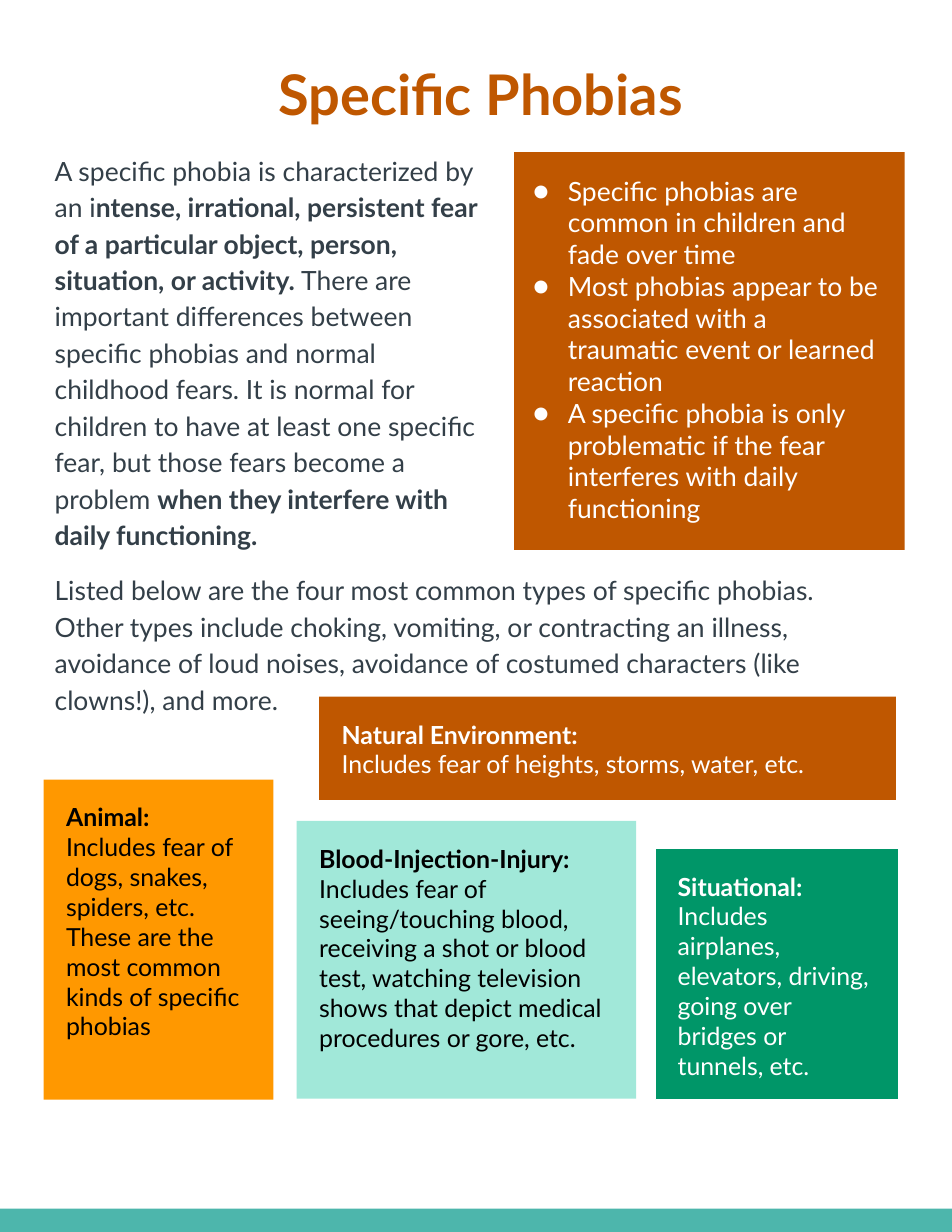
"""Build a one-page handout on specific phobias."""
from dataclasses import dataclass

from lxml import etree
from pptx import Presentation
from pptx.dml.color import RGBColor
from pptx.enum.shapes import MSO_SHAPE
from pptx.enum.text import MSO_ANCHOR, MSO_AUTO_SIZE, PP_ALIGN
from pptx.oxml.ns import qn
from pptx.util import Cm, Pt

RECTANGLE = MSO_SHAPE.RECTANGLE
TOP, MIDDLE = MSO_ANCHOR.TOP, MSO_ANCHOR.MIDDLE
LEFT, CENTER = PP_ALIGN.LEFT, PP_ALIGN.CENTER
NO_FIT = MSO_AUTO_SIZE.NONE

FONT = "Lato"
ORANGE, AMBER, MINT, GREEN, TEAL = "BF5700", "FF9800", "A1E8D9", "009668", "4DB6AC"
SLATE, BLACK, WHITE = "333F48", "000000", "FFFFFF"
PAGE_WIDTH, PAGE_HEIGHT, BAR_HEIGHT = 21.59, 27.94, 0.53
MARGIN = 0.99
NARROW, WIDE = 0.25, 0.51


@dataclass(frozen=True)
class Area:
    left: float
    top: float
    width: float
    height: float


@dataclass(frozen=True)
class Span:
    text: str
    bold: bool = False


@dataclass(frozen=True)
class Card:
    area: Area
    fill: str
    ink: str
    heading: str
    detail: str
    outline: str | None = None


INTRO = [
    Span("A specific phobia is characterized by an i"),
    Span("ntense, irrational, persistent fear of a particular object, person, "
         "situation, or activity.", True),
    Span(" There are important differences between specific phobias and normal "
         "childhood fears. It is normal for children to have at least one specific "
         "fear, but those fears become a problem "),
    Span("when they interfere with daily functioning.", True),
]
OVERVIEW = [
    Span("Listed below are the four most common types of specific phobias. Other types "
         "include choking, vomiting, or contracting an illness, avoidance of loud noises, "
         "avoidance of costumed characters (like clowns!), and more."),
]
FACTS = [
    "Specific phobias are common in children and fade over time",
    "Most phobias appear to be associated with a traumatic event or learned reaction",
    "A specific phobia is only problematic if the fear interferes with daily functioning",
]
CARDS = [
    Card(Area(MARGIN, 17.68, 5.21, 7.26), AMBER, BLACK, "Animal:",
         "Includes fear of dogs, snakes, spiders, etc. These are the most common "
         "kinds of specific phobias"),
    Card(Area(7.24, 15.8, 13.08, 2.34), ORANGE, WHITE, "Natural Environment:",
         "Includes fear of heights, storms, water, etc."),
    Card(Area(6.73, 18.62, 7.7, 6.3), MINT, BLACK, "Blood-Injection-Injury:",
         "Includes fear of seeing/touching blood, receiving a shot or blood test, "
         "watching television shows that depict medical procedures or gore, etc."),
    Card(Area(14.86, 19.25, 5.51, 5.69), GREEN, WHITE, "Situational:",
         "Includes airplanes, elevators, driving, going over bridges or tunnels, etc.",
         WHITE),
]


def color(value: str) -> RGBColor:
    return RGBColor.from_string(value)


def lengths(area: Area) -> tuple:
    return Cm(area.left), Cm(area.top), Cm(area.width), Cm(area.height)


def move(box, area: Area) -> None:
    box.left, box.top, box.width, box.height = lengths(area)


def add_rectangle(page, area: Area, fill: str, outline: str | None = None):
    box = page.shapes.add_shape(RECTANGLE, *lengths(area))
    box.shadow.inherit = False
    box.fill.solid()
    box.fill.fore_color.rgb = color(fill)
    if outline:
        box.line.color.rgb = color(outline)
        box.line.width = Pt(0.75)
    else:
        box.line.fill.background()
    return box


def set_bullet(para, ink: str | None) -> None:
    props = para._p.get_or_add_pPr()
    if ink is None:
        props.set("marL", "0")
        props.set("indent", "0")
        etree.SubElement(props, qn("a:buNone"))
        return
    props.set("marL", str(Cm(0.97)))
    props.set("indent", str(Cm(-0.79)))
    tint = etree.SubElement(props, qn("a:buClr"))
    etree.SubElement(tint, qn("a:srgbClr"), val=ink)
    etree.SubElement(props, qn("a:buFont"), typeface=FONT)
    etree.SubElement(props, qn("a:buChar"), char="●")


def write(box, paragraphs: list[list[Span]], size: float, ink: str,
          insets: tuple = (NARROW,) * 4, align=LEFT, anchor=TOP,
          spacing: float = 1.0, bulleted: bool = False) -> None:
    frame = box.text_frame
    frame.word_wrap = True
    frame.auto_size = NO_FIT
    frame.vertical_anchor = anchor
    (frame.margin_left, frame.margin_top,
     frame.margin_right, frame.margin_bottom) = map(Cm, insets)
    for index, spans in enumerate(paragraphs):
        para = frame.add_paragraph() if index else frame.paragraphs[0]
        set_bullet(para, ink if bulleted else None)
        para.alignment = align
        para.line_spacing = spacing
        para.space_before = Pt(0)
        for span in spans:
            run = para.add_run()
            run.text = span.text
            run.font.name = FONT
            run.font.size = Pt(size)
            run.font.bold = span.bold
            run.font.color.rgb = color(ink)


def add_card(page, card: Card) -> None:
    box = add_rectangle(page, card.area, card.fill, card.outline)
    write(box, [[Span(card.heading, True)], [Span(card.detail)]], 16, card.ink,
          (WIDE, WIDE, WIDE, NARROW))


def main() -> None:
    deck = Presentation()
    deck.slide_width, deck.slide_height = Cm(PAGE_WIDTH), Cm(PAGE_HEIGHT)
    page = deck.slides.add_slide(deck.slide_layouts[1])
    add_rectangle(page, Area(0, PAGE_HEIGHT - BAR_HEIGHT, PAGE_WIDTH, BAR_HEIGHT), TEAL)

    title, body = page.shapes.title, page.placeholders[1]
    move(title, Area(1.83, 1.07, 18.14, 2.08))
    write(title, [[Span("Specific Phobias", True)]], 36, ORANGE,
          align=CENTER, anchor=MIDDLE)
    move(body, Area(MARGIN, 3.15, 10.46, 9.53))
    write(body, [INTRO], 17, SLATE, spacing=1.15)

    facts = add_rectangle(page, Area(11.66, 3.45, 8.86, 9.02), ORANGE)
    write(facts, [[Span(fact)] for fact in FACTS], 17, WHITE,
          (NARROW, WIDE, WIDE, NARROW), bulleted=True)
    overview = page.shapes.add_textbox(*lengths(Area(MARGIN, 12.67, 19.1, 3.99)))
    write(overview, [OVERVIEW], 17, SLATE, spacing=1.15)

    for card in CARDS:
        add_card(page, card)
    deck.save("out.pptx")


if __name__ == "__main__":
    main()
